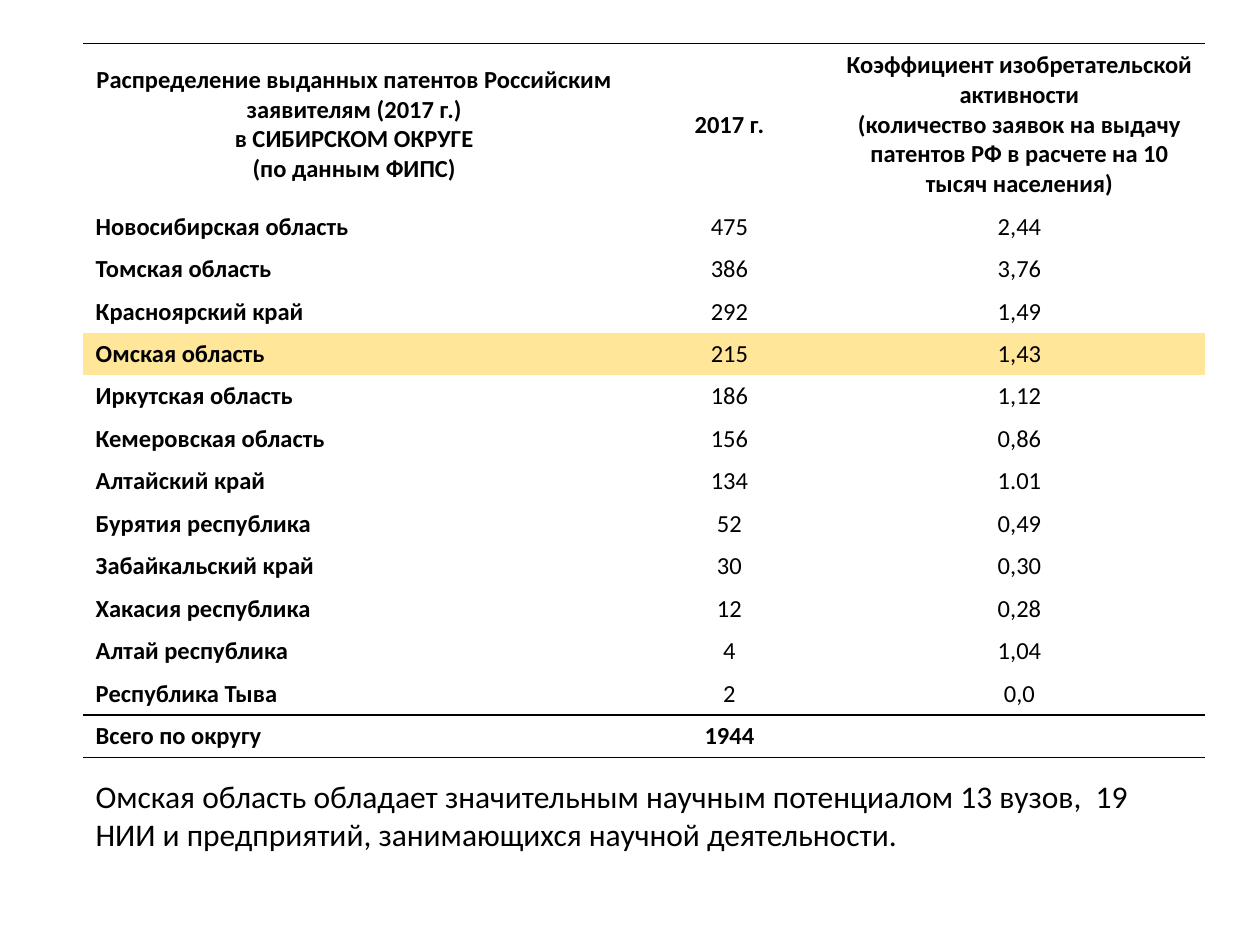
from lxml.etree import SubElement
from pptx import Presentation
from pptx.dml.color import RGBColor
from pptx.enum.text import MSO_ANCHOR, PP_ALIGN
from pptx.oxml.ns import qn
from pptx.util import Pt

BLACK = RGBColor(0x00, 0x00, 0x00)
WHITE = RGBColor(0xFF, 0xFF, 0xFF)
HIGHLIGHT = RGBColor(0xFF, 0xE6, 0x99)

HEADER = (
    "Распределение выданных патентов Российским заявителям (2017 г.)\n"
    "в СИБИРСКОМ ОКРУГЕ\n(по данным ФИПС)",
    "2017 г.",
    "Коэффициент изобретательской активности\n"
    "(количество заявок на выдачу патентов РФ в расчете на 10 тысяч населения)",
)
REGIONS = [
    ("Новосибирская область", "475", "2,44"),
    ("Томская область", "386", "3,76"),
    ("Красноярский край", "292", "1,49"),
    ("Омская область", "215", "1,43"),
    ("Иркутская область", "186", "1,12"),
    ("Кемеровская область", "156", "0,86"),
    ("Алтайский край", "134", "1.01"),
    ("Бурятия республика", "52", "0,49"),
    ("Забайкальский край", "30", "0,30"),
    ("Хакасия республика", "12", "0,28"),
    ("Алтай республика", "4", "1,04"),
    ("Республика Тыва", "2", "0,0"),
]
TOTAL = ("Всего по округу", "1944", "")
HIGHLIGHTED_REGION = "Омская область"
CONCLUSION = ("Омская область обладает значительным научным потенциалом 13 вузов,  19 НИИ "
              "и предприятий, занимающихся научной деятельности.")


class SlideBuilder:
    font_name = "Calibri"
    table_size = 14
    text_size = 18

    def __init__(self, slide):
        self.slide = slide

    def fill_text(self, frame, text, size, bold=False, alignment=PP_ALIGN.LEFT):
        frame.text = text
        frame.word_wrap = True
        for paragraph in frame.paragraphs:
            paragraph.alignment = alignment
            paragraph.font.name = self.font_name
            paragraph.font.size = Pt(size)
            paragraph.font.bold = bold
            paragraph.font.color.rgb = BLACK

    def borders(self, cell, ruled):
        properties = cell._tc.get_or_add_tcPr()
        for side in "LRTB":
            line = SubElement(properties, qn(f"a:ln{side}"), w=str(Pt(1)))
            if ruled and side in "TB":
                fill = SubElement(line, qn("a:solidFill"))
                SubElement(fill, qn("a:srgbClr"), val=str(BLACK))
            else:
                SubElement(line, qn("a:noFill"))

    def table(self, left, top, height, widths, row_heights, rows):
        shape = self.slide.shapes.add_table(
            len(rows), len(widths), Pt(left), Pt(top), Pt(sum(widths)), Pt(height))
        table = shape.table
        table.first_row = table.horz_banding = False
        for column, width in zip(table.columns, widths):
            column.width = Pt(width)
        for row, row_height in zip(table.rows, row_heights):
            row.height = Pt(row_height)
        shape.height = Pt(height)

        for row_index, values in enumerate(rows):
            header = row_index == 0
            ruled = header or row_index == len(rows) - 1
            for column_index, value in enumerate(values):
                cell = table.cell(row_index, column_index)
                first = column_index == 0
                centred = header or not first
                self.fill_text(cell.text_frame, value, self.table_size, ruled or first,
                               PP_ALIGN.CENTER if centred else PP_ALIGN.LEFT)
                if header:
                    cell.vertical_anchor = MSO_ANCHOR.MIDDLE
                self.borders(cell, ruled)
                if ruled or values[0] == HIGHLIGHTED_REGION:
                    cell.fill.solid()
                    cell.fill.fore_color.rgb = WHITE if ruled else HIGHLIGHT
                else:
                    cell.fill.background()

    def text(self, left, top, width, height, text):
        shape = self.slide.shapes.add_textbox(Pt(left), Pt(top), Pt(width), Pt(height))
        self.fill_text(shape.text_frame, text, self.text_size)


def main():
    presentation = Presentation()
    presentation.slide_width, presentation.slide_height = Pt(720), Pt(540)
    builder = SlideBuilder(presentation.slides.add_slide(presentation.slide_layouts[6]))

    # Patents by region
    builder.table(47.5, 25, 403, (309.8, 119, 212.5),
                  [77] + [20.2] * len(REGIONS) + [21.6],
                  [HEADER, *REGIONS, TOTAL])

    # Conclusion below the table
    builder.text(47.5, 440.6, 625, 51, CONCLUSION)

    presentation.save("out.pptx")


if __name__ == "__main__":
    main()
